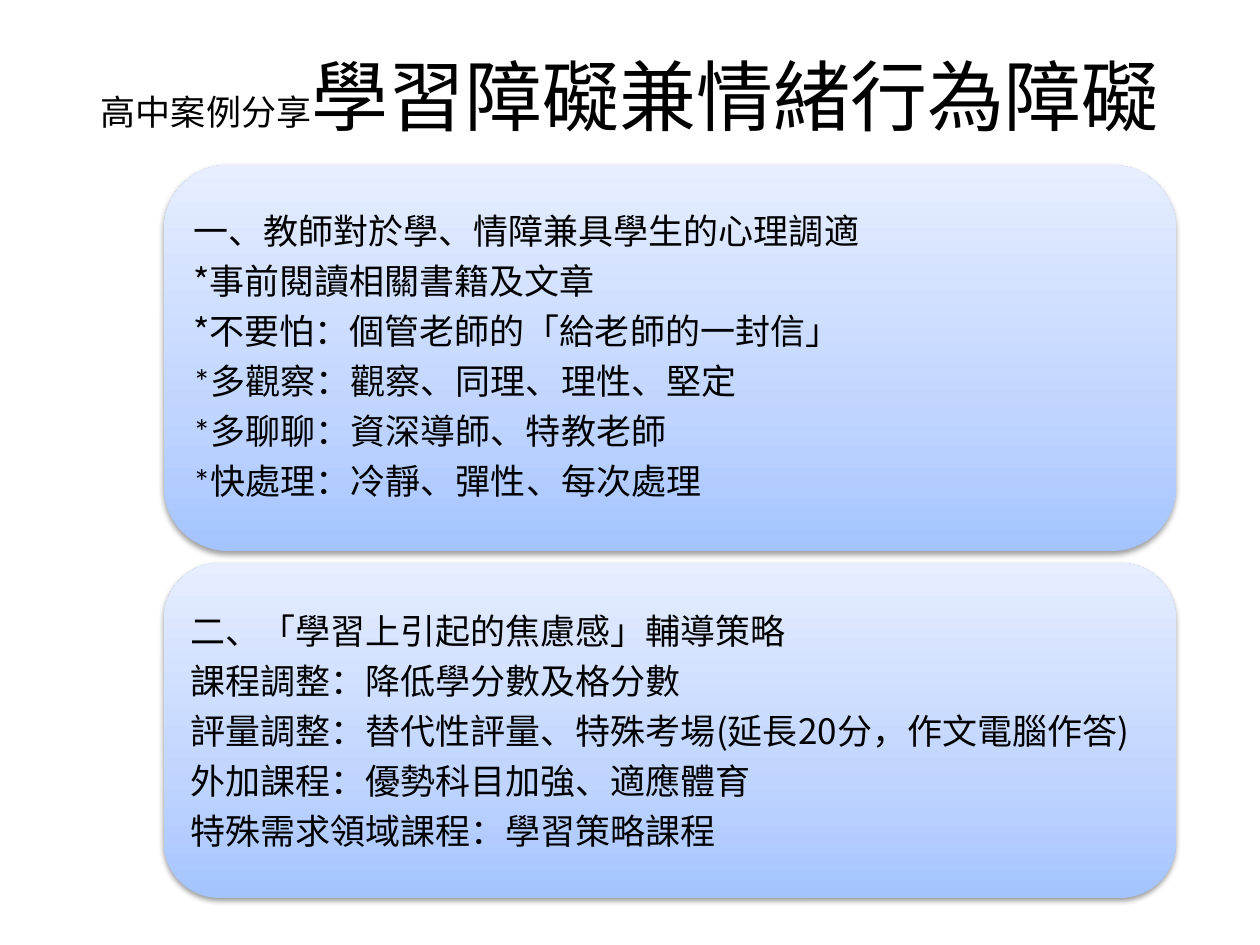
from lxml import etree
from pptx import Presentation
from pptx.dml.color import RGBColor
from pptx.enum.shapes import MSO_SHAPE
from pptx.enum.text import MSO_ANCHOR, MSO_AUTO_SIZE, PP_ALIGN
from pptx.oxml.ns import qn
from pptx.util import Emu, Pt

ROUNDED = MSO_SHAPE.ROUNDED_RECTANGLE
MIDDLE, TOP = MSO_ANCHOR.MIDDLE, MSO_ANCHOR.TOP
FIXED = MSO_AUTO_SIZE.NONE
CENTER = PP_ALIGN.CENTER

SCALE = 914400 / 126
COLORS = {"text": "000000", "shadow": "000000", "low": "A4C4FF", "mid": "BFD4FF", "high": "E6EEFF"}
TC, SC, LATIN = "Noto Sans CJK TC", "Noto Sans CJK SC", "Calibri"
PANEL_LEFT, PANEL_WIDTH = 164, 1012
INSET = 10

TITLE = [("高中案例分享", 20), ("學習障礙兼情緒行為障礙", 44)]
ADJUSTMENT = [
    [("一、教師對於學、情障兼具學生的心理調適", TC)],
    [("*事前閱讀相關書籍及文章", TC)],
    [("*不要怕：個管老師的「給老師的一封信」", TC)],
    [("*多觀察：觀察、同理、理性、堅定", LATIN)],
    [("*多聊聊：資深導師、特教老師", LATIN)],
    [("*快處理", LATIN), ("：冷靜、彈性、每次處理", TC)],
]
STRATEGIES = [
    [("二、「學習上引起的焦慮感」輔導策略", TC)],
    [("課程調整：降低學分數及格分數", TC)],
    [("評量調整：替代性評量、特殊考場(延長20分，作文電腦作答)", TC)],
    [("外加課程：優勢科目加強、適應體育", TC)],
    [("特殊需求領域課程：學習策略課程", TC)],
]


def px(length):
    """Turn pixels into EMU."""
    return Emu(round(length * SCALE))


def add_color(parent, name):
    """Append a named colour to an XML element."""
    return etree.SubElement(parent, qn("a:srgbClr"), val=COLORS[name])


def add_span(para, text, size, latin, asian):
    """Append a run with its size, colour and fonts."""
    span = para.add_run()
    span.text = text
    span.font.size = Pt(size)
    span.font.color.rgb = RGBColor.from_string(COLORS["text"])
    span.font.name = latin
    etree.SubElement(span.font._element, qn("a:ea"), typeface=asian)


def set_title(slide):
    """Place the title and fill it with its two sizes of text."""
    title = slide.shapes.title
    title.left, title.top, title.width, title.height = map(px, (63, 16, 1134, 158))
    frame = title.text_frame
    frame.auto_size = FIXED
    frame.vertical_anchor = MIDDLE
    para = frame.paragraphs[0]
    para.alignment = CENTER
    for text, size in TITLE:
        add_span(para, text, size, SC, SC)


def add_panel(slide, top, height):
    """Draw a rounded panel with a vertical gradient and a soft shadow."""
    panel = slide.shapes.add_shape(ROUNDED, *map(px, (PANEL_LEFT, top, PANEL_WIDTH, height)))
    panel.line.fill.background()
    panel.fill.gradient()
    panel.fill.gradient_angle = 90
    stops = panel._element.spPr.find(".//" + qn("a:gsLst"))
    for stop in list(stops):
        stops.remove(stop)
    for name, position in (("low", 0), ("mid", 35), ("high", 100)):
        add_color(etree.SubElement(stops, qn("a:gs"), pos=str(position * 1000)), name)
    panel.shadow.inherit = False
    effects = panel._element.spPr.find(qn("a:effectLst"))
    shadow = etree.SubElement(
        effects, qn("a:outerShdw"), blurRad=str(Pt(3.1)), dist=str(Pt(1.6)),
        dir="5400000", rotWithShape="0")
    etree.SubElement(add_color(shadow, "shadow"), qn("a:alpha"), val="38000")


def add_body(slide, bounds, lines, anchor, top_inset):
    """Write the lines of a panel in a text box."""
    box = slide.shapes.add_textbox(*map(px, bounds))
    frame = box.text_frame
    frame.word_wrap = True
    frame.auto_size = FIXED
    frame.vertical_anchor = anchor
    frame.margin_left = frame.margin_right = frame.margin_bottom = px(INSET)
    frame.margin_top = px(top_inset)
    for index, line in enumerate(lines):
        para = frame.add_paragraph() if index else frame.paragraphs[0]
        para.line_spacing = 0.9
        para.space_after = Pt(7)
        for text, latin in line:
            add_span(para, text, 20, latin, TC)


def main():
    """Build the slide and save it."""
    deck = Presentation()
    deck.slide_width, deck.slide_height = px(1260), px(945)
    slide = deck.slides.add_slide(deck.slide_layouts[5])
    set_title(slide)
    add_panel(slide, 165, 386)
    add_body(slide, (183, 184, 974, 348), ADJUSTMENT, MIDDLE, INSET)
    add_panel(slide, 563, 335)
    add_body(slide, (180, 580, 979, 302), STRATEGIES, TOP, 34)
    deck.save("out.pptx")


if __name__ == "__main__":
    main()
